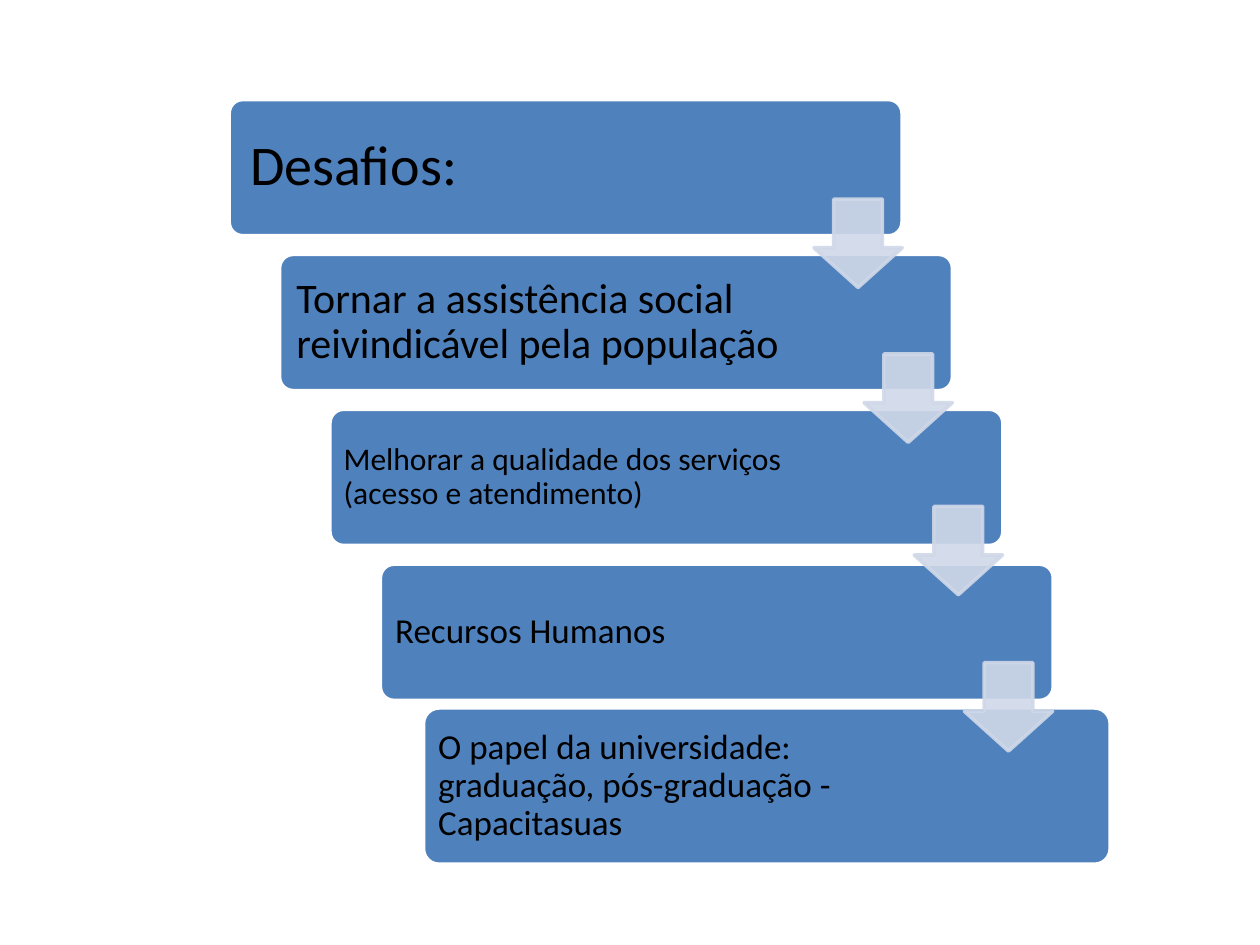
from lxml.etree import SubElement as Sub
from pptx import Presentation
from pptx.dml.color import RGBColor as RGB
from pptx.enum.shapes import MSO_SHAPE as Kind
from pptx.enum.text import MSO_ANCHOR as Anchor, PP_ALIGN as Align
from pptx.oxml.ns import qn
from pptx.util import Pt

# Content: text, type size, text width
STEPS = [
    ("Desafios:", "xl", 291.6),
    ("Tornar a assistência social reivindicável pela população", "lg", 300.2),
    ("Melhorar a qualidade dos serviços (acesso e atendimento)", "sm", 300.2),
    ("Recursos Humanos", "md", 300.2),
    ("O papel da universidade: graduação, pós-graduação - Capacitasuas",
     "md", 306),
]
THEME = {
    "font": "Calibri", "ink": "000000", "box": "4F81BD", "edge": "FFFFFF",
    "arrow": "D0D8E8", "alpha": 90,
    "xl": 32, "lg": 24, "md": 20, "sm": 18,
}

# Layout in points
LEFT, TOP, WIDE, HIGH = 131, 56.9, 384.5, 77.8
STEP_X, STEP_Y = 28.8, 88.5
LAST = (242, 404.6, 392.4, 89.3)  # the closing box is larger
PAD = 2.4
ARROW_X, ARROW_STEP, ARROW = 465.1, 28.65, 50.5
ARROW_TOPS = [113.8, 202.3, 289.4, 378.7]


def add_form(slide, kind, area, adjust, fill, line, alpha=None):
    form = slide.shapes.add_shape(kind, *map(Pt, area))
    form.shadow.inherit = False
    for i, part in enumerate(adjust):
        form.adjustments[i] = part
    form.fill.solid()
    form.fill.fore_color.rgb = RGB.from_string(THEME[fill])
    form.line.color.rgb = RGB.from_string(THEME[line])
    form.line.width = Pt(2)
    if alpha:
        props = form._element.spPr
        for paint in (props, props.find(qn("a:ln"))):
            tint = paint.find(qn("a:solidFill"))[0]
            Sub(tint, qn("a:alpha"), val=str(alpha * 1000))


def add_text(slide, text, area, *, size, color="ink", space=0.9):
    frame = slide.shapes.add_textbox(*map(Pt, area)).text_frame
    frame.word_wrap = True
    frame.vertical_anchor = Anchor.MIDDLE
    inset = Pt(0.3 * size)
    frame.margin_left = frame.margin_right = inset
    frame.margin_top = frame.margin_bottom = inset
    para = frame.paragraphs[0]
    para.alignment = Align.LEFT
    para.line_spacing = space
    run = para.add_run()
    run.text = text
    run.font.name = THEME["font"]
    run.font.size = Pt(size)
    run.font.color.rgb = RGB.from_string(THEME[color])


def main():
    deck = Presentation()
    deck.slide_width, deck.slide_height = Pt(720), Pt(540)
    slide = deck.slides.add_slide(deck.slide_layouts[6])

    # Staggered boxes with their text
    areas = [(LEFT + i * STEP_X, TOP + i * STEP_Y, WIDE, HIGH)
             for i in range(len(STEPS) - 1)] + [LAST]
    for (text, size, width), area in zip(STEPS, areas):
        add_form(slide, Kind.ROUNDED_RECTANGLE, area, [0.1], "box", "edge")
        x, y, _, high = area
        add_text(slide, text, (x + PAD, y + PAD, width, high - 2 * PAD),
                 size=THEME[size])

    # Arrows from each box to the next
    for i, top in enumerate(ARROW_TOPS):
        area = (ARROW_X + i * ARROW_STEP, top, ARROW, ARROW)
        add_form(slide, Kind.DOWN_ARROW, area, [0.55, 0.45],
                 "arrow", "arrow", THEME["alpha"])

    deck.save("out.pptx")


if __name__ == "__main__":
    main()
